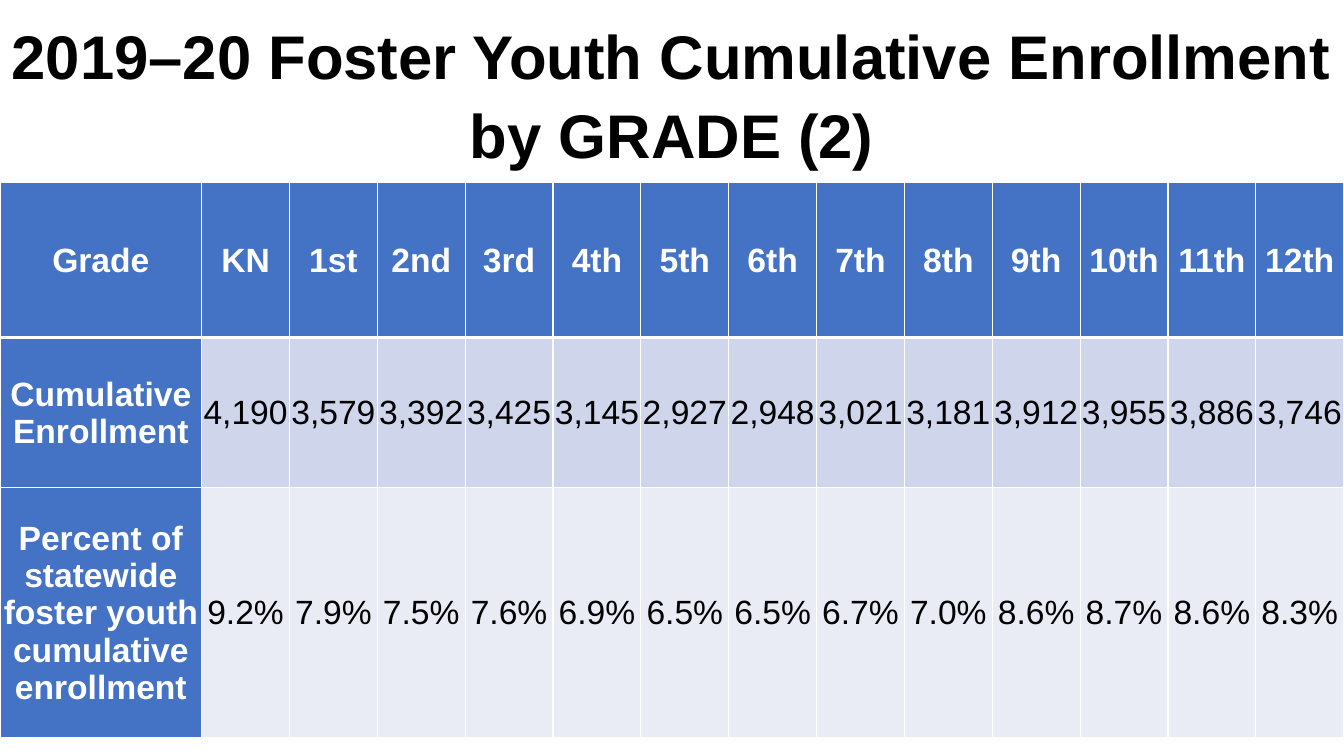
import lxml.etree
import pptx
import pptx.dml.color
import pptx.enum.text
import pptx.oxml
import pptx.oxml.ns
import pptx.util

SLIDE_WIDTH, SLIDE_HEIGHT = 13.33, 7.5
BLACK, WHITE, BLUE = "000000", "FFFFFF", "4472C4"
BAND_FILLS = ["CFD5EA", "E9EBF5"]

TITLE = "2019–20 Foster Youth Cumulative Enrollment by GRADE (2)"
GRADES = ["KN", "1st", "2nd", "3rd"] + [f"{grade}th" for grade in range(4, 13)]
ENROLLMENT = [4190, 3579, 3392, 3425, 3145, 2927, 2948,
              3021, 3181, 3912, 3955, 3886, 3746]
PERCENTAGES = [9.2, 7.9, 7.5, 7.6, 6.9, 6.5, 6.5, 6.7, 7.0, 8.6, 8.7, 8.6, 8.3]
ROWS = [
    ["Grade", *GRADES],
    ["Cumulative Enrollment", *(f"{count:,}" for count in ENROLLMENT)],
    ["Percent of statewide foster youth cumulative enrollment",
     *(f"{percent:.1f}%" for percent in PERCENTAGES)],
]
LABEL_WIDTH = 2
ROW_HEIGHTS = [1.54, 1.49, 2.48]


def color(hex_string):
    return pptx.dml.color.RGBColor.from_string(hex_string)


class SlideBuilder:
    """Holds the style and the slide being built."""

    font_name = "Arial"
    title_size = 44
    table_size = 24

    def __init__(self, presentation):
        self.width = presentation.slide_width
        self.height = presentation.slide_height
        self.slide = presentation.slides.add_slide(presentation.slide_layouts[5])

    def box(self, left, top, width, height):
        """Turn shares of the slide's size into lengths."""
        return (int(left * self.width), int(top * self.height),
                int(width * self.width), int(height * self.height))

    def format_paragraph(self, paragraph, size, text_color, bold):
        paragraph.alignment = pptx.enum.text.PP_ALIGN.CENTER
        paragraph.font.name = self.font_name
        paragraph.font.size = pptx.util.Pt(size)
        paragraph.font.bold = bold
        paragraph.font.color.rgb = color(text_color)

    def title(self, text, *shares):
        shape = self.slide.shapes.title
        shape.left, shape.top, shape.width, shape.height = self.box(*shares)
        frame = shape.text_frame
        frame.text = text
        frame.word_wrap = True
        frame.auto_size = pptx.enum.text.MSO_AUTO_SIZE.NONE
        frame.vertical_anchor = pptx.enum.text.MSO_ANCHOR.MIDDLE
        paragraph = frame.paragraphs[0]
        paragraph.line_spacing = 1.07
        self.format_paragraph(paragraph, self.title_size, BLACK, True)

    def borders(self, cell, top, bottom):
        properties = cell._tc.get_or_add_tcPr()
        edges = {"lnL": 1, "lnR": 1, "lnT": top, "lnB": bottom}
        for position, (edge, points) in enumerate(edges.items()):
            line = pptx.oxml.parse_xml(
                f'<a:{edge} {pptx.oxml.ns.nsdecls("a")} w="{pptx.util.Pt(points)}">'
                f'<a:solidFill><a:srgbClr val="{WHITE}"/></a:solidFill></a:{edge}>')
            properties.insert(position, line)

    def cell(self, cell, text, fill, text_color, bold):
        cell.text = text
        cell.vertical_anchor = pptx.enum.text.MSO_ANCHOR.MIDDLE
        cell.margin_left = cell.margin_top = cell.margin_right = pptx.util.Inches(0.01)
        cell.margin_bottom = 0
        cell.fill.solid()
        cell.fill.fore_color.rgb = color(fill)
        self.format_paragraph(cell.text_frame.paragraphs[0], self.table_size,
                              text_color, bold)

    def table(self, rows, label_width, row_heights, *shares):
        frame = self.slide.shapes.add_table(len(rows), len(rows[0]), *self.box(*shares))
        table = frame.table
        table.first_col = True

        # Label column, then equal grade columns
        label = pptx.util.Inches(label_width)
        grade_width = (self.width - label) // (len(rows[0]) - 1)
        for index, column in enumerate(table.columns):
            column.width = grade_width if index else label
        for row, height in zip(table.rows, row_heights):
            row.height = pptx.util.Inches(height)

        # Blue headings above and beside banded values
        for row_index, texts in enumerate(rows):
            for column_index, text in enumerate(texts):
                cell = table.cell(row_index, column_index)
                heading = row_index == 0 or column_index == 0
                fill = BLUE if heading else BAND_FILLS[row_index - 1]
                self.cell(cell, text, fill, WHITE if heading else BLACK, heading)
                self.borders(cell, top=3 if row_index == 1 else 1,
                             bottom=3 if row_index == 0 else 1)


def main():
    presentation = pptx.Presentation()
    presentation.slide_width = pptx.util.Inches(SLIDE_WIDTH)
    presentation.slide_height = pptx.util.Inches(SLIDE_HEIGHT)
    builder = SlideBuilder(presentation)

    # Heading
    builder.title(TITLE, 0, 0.02 / SLIDE_HEIGHT, 1, 1.78 / SLIDE_HEIGHT)

    # Enrollment by grade
    builder.table(ROWS, LABEL_WIDTH, ROW_HEIGHTS,
                  0, 1.81 / SLIDE_HEIGHT, 1, sum(ROW_HEIGHTS) / SLIDE_HEIGHT)

    presentation.save("out.pptx")


if __name__ == "__main__":
    main()
